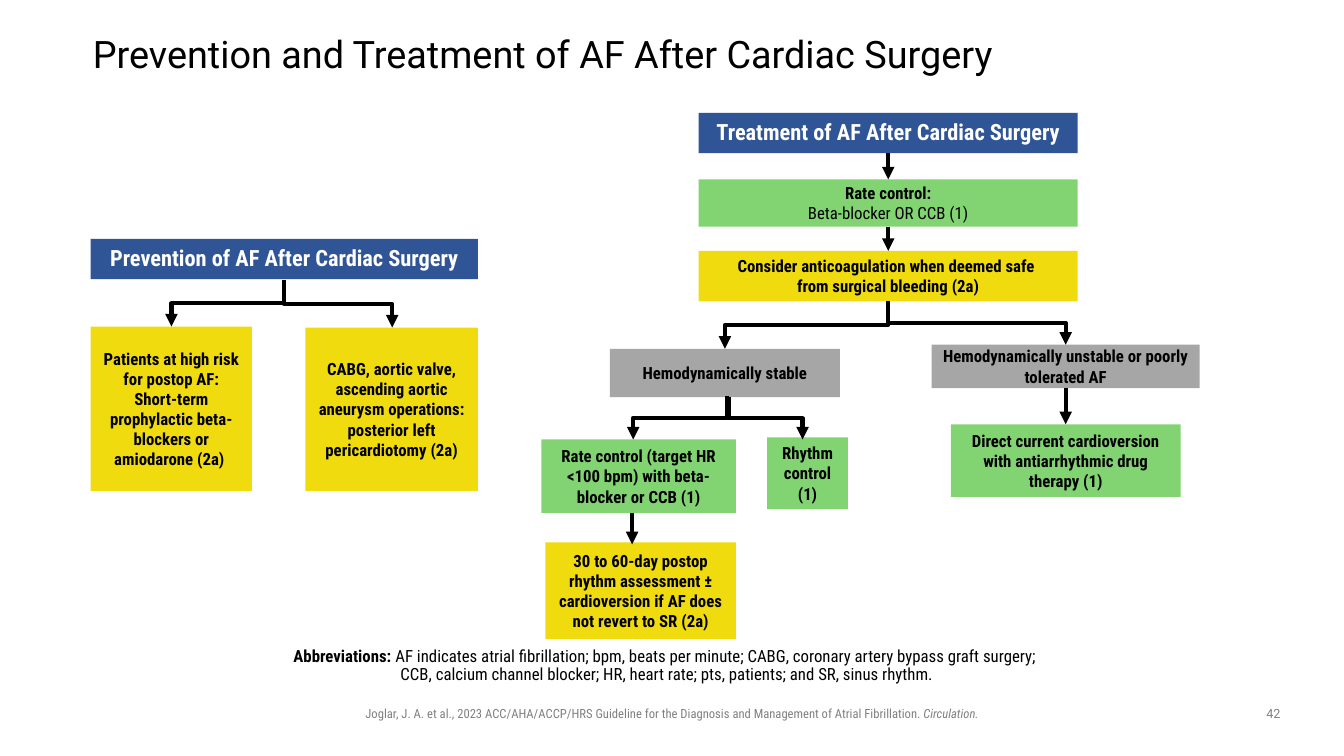
import pptx
import pptx.dml.color
import pptx.enum.shapes
import pptx.enum.text
import pptx.oxml.ns
import pptx.util
from lxml import etree

RGBColor = pptx.dml.color.RGBColor
BLUE = RGBColor(0x2F, 0x55, 0x97)
YELLOW = RGBColor(0xF0, 0xDB, 0x0E)
GREEN = RGBColor(0x82, 0xD4, 0x72)
GRAY = RGBColor(0xA6, 0xA6, 0xA6)
FOOTER_GRAY = RGBColor(0x80, 0x80, 0x80)
BLACK = RGBColor(0, 0, 0)
WHITE = RGBColor(0xFF, 0xFF, 0xFF)

PX = 9144  # 100 px to the inch
CONDENSED = "Roboto Condensed"
ALIGN = pptx.enum.text.PP_ALIGN
ANCHOR = pptx.enum.text.MSO_ANCHOR
CONNECTOR = pptx.enum.shapes.MSO_CONNECTOR
qn = pptx.oxml.ns.qn


def px(*lengths):
    return [pptx.util.Emu(length * PX) for length in lengths]


def write(frame, *paragraphs, size=12, font=CONDENSED, color=BLACK, bold=False,
          align=ALIGN.CENTER, anchor=ANCHOR.MIDDLE, spacing=None, after=None,
          insets=(10, 5, 10, 5)):
    """Fill a frame; a paragraph is a string or a list of (text, font overrides)."""
    frame.word_wrap = True
    frame.auto_size = pptx.enum.text.MSO_AUTO_SIZE.NONE
    frame.vertical_anchor = anchor
    (frame.margin_left, frame.margin_top,
     frame.margin_right, frame.margin_bottom) = px(*insets)
    for index, content in enumerate(paragraphs):
        paragraph = frame.add_paragraph() if index else frame.paragraphs[0]
        paragraph.alignment = align
        paragraph.line_spacing = spacing
        paragraph.space_before = pptx.util.Pt(0)
        if after:
            paragraph.space_after = pptx.util.Pt(after)
        segments = [(content, {})] if isinstance(content, str) else content
        for text, overrides in segments:
            for number, line in enumerate(text.split("\n")):
                if number:
                    paragraph.add_line_break()
                run = paragraph.add_run()
                run.text = line
                run.font.size = pptx.util.Pt(size)
                run.font.name = font
                run.font.color.rgb = color
                run.font.bold = bold
                for key, value in overrides.items():
                    setattr(run.font, key, value)


def add_box(slide, bounds, fill, *paragraphs, **text_format):
    box = slide.shapes.add_shape(
        pptx.enum.shapes.MSO_SHAPE.RECTANGLE, *px(*bounds))
    box.shadow.inherit = False
    box.fill.solid()
    box.fill.fore_color.rgb = fill
    box.line.fill.background()
    write(box.text_frame, *paragraphs, **{"bold": True, **text_format})


def add_heading(slide, bounds, text):
    add_box(slide, bounds, BLUE, text, size=16, color=WHITE, spacing=0.9,
            insets=(0, 0, 0, 0))


def add_label(slide, bounds, *paragraphs, **text_format):
    label = slide.shapes.add_textbox(*px(*bounds))
    write(label.text_frame, *paragraphs, anchor=ANCHOR.TOP, **text_format)


def add_arrow(slide, x1, y1, x2, y2):
    """Draw a downward arrow, bent at half height when the ends are not aligned."""
    if x1 == x2:
        arrow = slide.shapes.add_connector(CONNECTOR.STRAIGHT, *px(x1, y1, x2, y2))
    else:
        # The elbow starts sideways, so it is laid out flat and then turned.
        drop, reach = y2 - y1, abs(x2 - x1)
        left = (x1 + x2 - drop) / 2
        top = (y1 + y2 - reach) / 2
        corners = [int(v * PX) for v in (left, top, left + drop, top + reach)]
        arrow = slide.shapes.add_connector(CONNECTOR.ELBOW, *corners)
        xfrm = arrow._element.spPr.find(qn("a:xfrm"))
        if x2 < x1:
            xfrm.set("rot", str(90 * 60000))
        else:
            xfrm.set("rot", str(270 * 60000))
            xfrm.set("flipH", "1")
    arrow.line.color.rgb = BLACK
    arrow.line.width = pptx.util.Pt(3)
    etree.SubElement(arrow.line._get_or_add_ln(), qn("a:tailEnd"), type="triangle")
    etree.SubElement(arrow._element.spPr, qn("a:effectLst"))


def add_title(slide, text):
    title = slide.shapes.title
    title.left, title.top, title.width, title.height = px(92, 40, 1055, 31)
    write(title.text_frame, text, size=27, font="Roboto", align=ALIGN.LEFT,
          spacing=0.9, insets=(0, 0, 0, 0))


def add_prevention(slide):
    add_heading(slide, (90, 237, 384, 40), "Prevention of AF After Cardiac Surgery")
    add_box(slide, (90, 324, 160, 163), YELLOW,
            "Patients at high risk for postop AF: Short-term prophylactic "
            "beta-blockers or amiodarone (2a) ")
    add_box(slide, (303, 325, 171, 162), YELLOW,
            "CABG, aortic valve, ascending aortic aneurysm operations: "
            "posterior left pericardiotomy (2a)")
    add_arrow(slide, 282, 278, 170, 324)
    add_arrow(slide, 282, 278, 389, 325)


def add_treatment(slide):
    add_heading(slide, (693, 112, 376, 40), "Treatment of AF After Cardiac Surgery")
    add_box(slide, (693, 178, 376, 47), GREEN,
            "Rate control:", [("Beta-blocker OR CCB (1)", {"bold": False})])
    add_box(slide, (693, 249, 376, 50), YELLOW,
            "Consider anticoagulation when deemed safe \nfrom surgical bleeding (2a)")
    add_box(slide, (605, 346, 228, 48), GRAY, "Hemodynamically stable")
    add_box(slide, (924, 342, 266, 43), GRAY,
            "Hemodynamically unstable or poorly tolerated AF")
    add_box(slide, (537, 436, 193, 73), GREEN,
            "Rate control (target HR <100 bpm) with beta-blocker or CCB (1)")
    add_box(slide, (761, 434, 80, 71), GREEN, "Rhythm control", "(1)")
    add_box(slide, (541, 538, 189, 96), YELLOW,
            "30 to 60-day postop rhythm assessment ± cardioversion if AF does "
            "not revert to SR (2a)")
    add_box(slide, (943, 421, 228, 72), GREEN,
            "Direct current cardioversion with antiarrhythmic drug therapy (1)",
            after=6)
    for ends in (
        (881, 152, 881, 178),
        (881, 225, 881, 249),
        (881, 299, 719, 346),
        (881, 299, 1057, 342),
        (1057, 385, 1057, 421),
        (721, 393, 628, 436),
        (723, 394, 796, 436),
        (627, 509, 627, 540),
    ):
        add_arrow(slide, *ends)


def add_notes_and_footer(slide):
    add_label(slide, (258, 638, 817, 40), [
        ("Abbreviations: ", {"bold": True}),
        ("AF indicates atrial fibrillation; bpm, beats per minute; CABG, coronary "
         "artery bypass graft surgery; \nCCB, calcium channel blocker; HR, heart "
         "rate; pts, patients; and SR, sinus rhythm.", {}),
    ], spacing=0.9, insets=(0, 5, 10, 5))
    add_label(slide, (294, 695, 745, 25), [
        ("Joglar, J. A. et al., 2023 ACC/AHA/ACCP/HRS Guideline for the Diagnosis "
         "and Management of Atrial Fibrillation. ", {}),
        ("Circulation.", {"italic": True}),
    ], size=9, color=FOOTER_GRAY)
    add_label(slide, (1242, 695, 42, 26), "42", size=9, font="Roboto",
              color=FOOTER_GRAY)


def main():
    deck = pptx.Presentation()
    deck.slide_width, deck.slide_height = px(1333, 750)
    slide = deck.slides.add_slide(deck.slide_layouts[5])
    add_title(slide, "Prevention and Treatment of AF After Cardiac Surgery")
    add_prevention(slide)
    add_treatment(slide)
    add_notes_and_footer(slide)
    deck.save("out.pptx")


if __name__ == "__main__":
    main()
